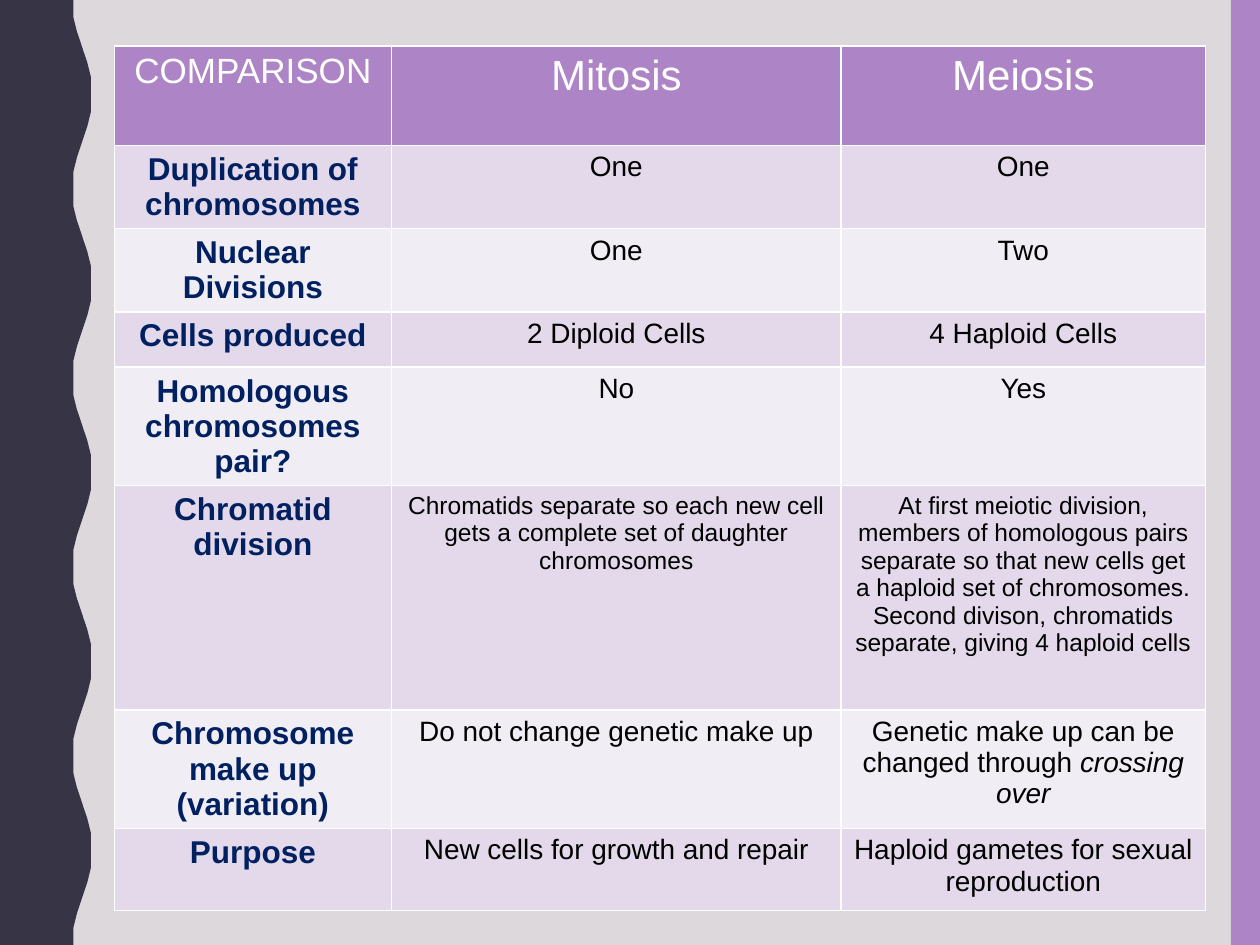
from dataclasses import dataclass

from lxml import etree
from pptx import Presentation
from pptx import util as u
from pptx.dml.color import RGBColor
from pptx.enum import shapes, text
from pptx.oxml import ns

Pt = u.Pt
PAGE_WIDTH, PAGE_HEIGHT = 720, 540
WAVE_PERIOD = 108
WAVE_SUM = 94
QUARTER_WAVE = [(41.8, 0), (42, 5), (42.4, 10), (43.1, 14.4), (44, 18), (45, 21), (46, 24)]
COLUMN_WIDTHS = [158.4, 257, 208.1]
COLOURS = {
    "background": "DCD8DC",
    "wave": "373545",
    "accent": "AD84C6",
    "dark_band": "E3D9EA",
    "light_band": "F1EDF5",
    "label": "002060",
    "body": "000000",
    "white": "FFFFFF",
}


@dataclass
class Style:
    size: float
    colour: str
    bold: bool = False


@dataclass
class Row:
    label: str
    mitosis: str
    meiosis: str
    height: float
    body_size: float = 16
    emphasis: str = ""


ROWS = [
    Row("Duplication of chromosomes", "One", "One", 46.8),
    Row("Nuclear Divisions", "One", "Two", 30.2),
    Row("Cells produced", "2 Diploid Cells", "4 Haploid Cells", 31.7),
    Row("Homologous chromosomes pair?", "No", "Yes", 64.8),
    Row(
        "Chromatid division",
        "Chromatids separate so each new cell gets a complete set of daughter chromosomes",
        "At first meiotic division, members of homologous pairs separate so that new cells get "
        "a haploid set of chromosomes. Second divison, chromatids separate, giving 4 haploid cells",
        128.2,
        14,
    ),
    Row(
        "Chromosome make up (variation)",
        "Do not change genetic make up",
        "Genetic make up can be changed through ",
        66.2,
        emphasis="crossing over",
    ),
    Row(
        "Purpose",
        "New cells for growth and repair",
        "Haploid gametes for sexual reproduction",
        46.8,
    ),
]
HEADER = Row("COMPARISON", "Mitosis", "Meiosis", 56.9)


def rgb(name: str) -> RGBColor:
    return RGBColor.from_string(COLOURS[name])


def paint(shape, colour: str) -> None:
    shape.shadow.inherit = False
    shape.fill.solid()
    shape.fill.fore_color.rgb = rgb(colour)
    shape.line.fill.background()


def wave_points() -> list[tuple[float, float]]:
    half = WAVE_PERIOD / 2
    rise = QUARTER_WAVE + [(WAVE_SUM - x, half - y) for x, y in reversed(QUARTER_WAVE)]
    fall = [(x, WAVE_PERIOD - y) for x, y in reversed(rise[:-1])]
    periods = PAGE_HEIGHT // WAVE_PERIOD
    return [(x, y + i * WAVE_PERIOD) for i in range(periods) for x, y in rise + fall]


def draw_wave(page) -> None:
    builder = page.shapes.build_freeform(0, 0, scale=Pt(1))
    builder.add_line_segments(wave_points() + [(0, PAGE_HEIGHT)], close=True)
    paint(builder.convert_to_shape(), "wave")


def add_borders(cell) -> None:
    properties = cell._tc.get_or_add_tcPr()
    for position, side in enumerate(("lnL", "lnR", "lnT", "lnB")):
        line = etree.Element(ns.qn(f"a:{side}"), w=str(Pt(1)))
        fill = etree.SubElement(line, ns.qn("a:solidFill"))
        etree.SubElement(fill, ns.qn("a:srgbClr"), val=COLOURS["white"])
        properties.insert(position, line)


def fill_cell(cell, wording: str, style: Style, band: str, emphasis: str = "") -> None:
    cell.fill.solid()
    cell.fill.fore_color.rgb = rgb(band)
    add_borders(cell)
    cell.text_frame.text = wording
    para = cell.text_frame.paragraphs[0]
    para.alignment = text.PP_ALIGN.CENTER
    if emphasis:
        span = para.add_run()
        span.text = emphasis
        span.font.italic = True
    for span in para.runs:
        span.font.name = "Arial"
        span.font.size = Pt(style.size)
        span.font.bold = style.bold
        span.font.color.rgb = rgb(style.colour)


def draw_row(table, index: int, row: Row, band: str, label: Style, body: Style) -> None:
    table.rows[index].height = Pt(row.height)
    fill_cell(table.cell(index, 0), row.label, label, band)
    fill_cell(table.cell(index, 1), row.mitosis, body, band)
    fill_cell(table.cell(index, 2), row.meiosis, body, band, row.emphasis)


def draw_table(page) -> None:
    height = HEADER.height + sum(row.height for row in ROWS)
    table = page.shapes.add_table(
        len(ROWS) + 1, len(COLUMN_WIDTHS), Pt(65.3), Pt(26.2), Pt(sum(COLUMN_WIDTHS)), Pt(height)
    ).table
    for column, width in zip(table.columns, COLUMN_WIDTHS):
        column.width = Pt(width)
    draw_row(table, 0, HEADER, "accent", Style(20, "white"), Style(24, "white"))
    for index, row in enumerate(ROWS, start=1):
        band = "dark_band" if index % 2 else "light_band"
        draw_row(table, index, row, band, Style(18, "label", True), Style(row.body_size, "body"))


def main() -> None:
    deck = Presentation()
    deck.slide_width, deck.slide_height = Pt(PAGE_WIDTH), Pt(PAGE_HEIGHT)
    page = deck.slides.add_slide(deck.slide_layouts[6])
    page.background.fill.solid()
    page.background.fill.fore_color.rgb = rgb("background")
    draw_wave(page)
    stripe = page.shapes.add_shape(
        shapes.MSO_SHAPE.RECTANGLE, Pt(703.4), 0, Pt(16.6), Pt(PAGE_HEIGHT)
    )
    paint(stripe, "accent")
    draw_table(page)
    deck.save("out.pptx")


if __name__ == "__main__":
    main()
